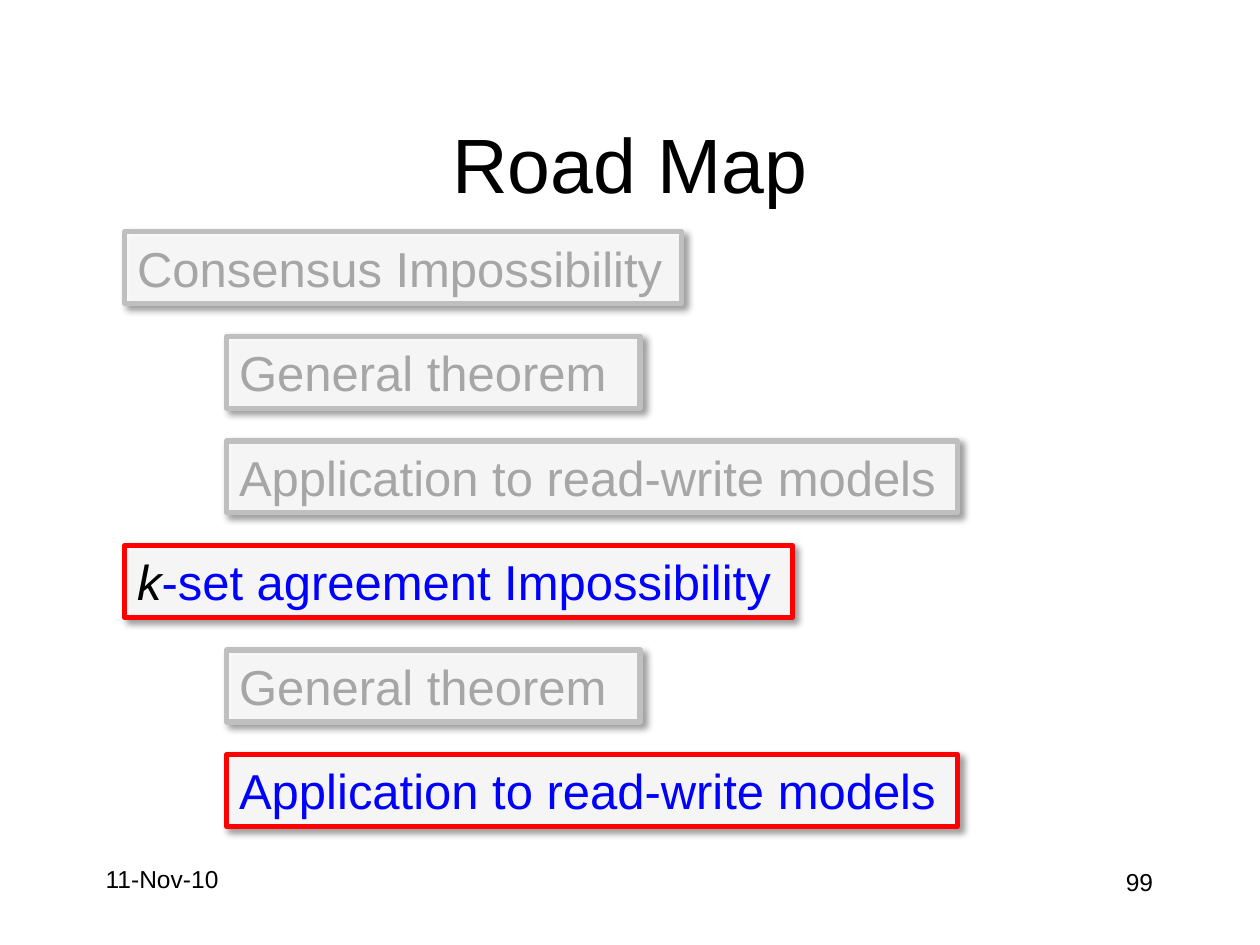
"""Build the Road Map slide with its indented list of topic boxes."""
import pptx
import pptx.dml.color
import pptx.enum.text
import pptx.oxml
import pptx.oxml.ns
import pptx.util
from pptx.util import Inches

BLACK = pptx.dml.color.RGBColor(0x00, 0x00, 0x00)
WHITE = pptx.dml.color.RGBColor(0xFF, 0xFF, 0xFF)
GRAY_TEXT = pptx.dml.color.RGBColor(0xA6, 0xA6, 0xA6)
GRAY_LINE = pptx.dml.color.RGBColor(0xBF, 0xBF, 0xBF)
RED = pptx.dml.color.RGBColor(0xFF, 0x00, 0x00)
BLUE = pptx.dml.color.RGBColor(0x00, 0x00, 0xFF)

NAMESPACE = pptx.oxml.ns.nsdecls("a")
ALPHA_XML = f'<a:alpha {NAMESPACE} val="90000"/>'
SHADOW_XML = (
    f'<a:effectLst {NAMESPACE}><a:outerShdw blurRad="50800" dist="38100" '
    'dir="2700000" algn="tl" rotWithShape="0"><a:srgbClr val="000000">'
    '<a:alpha val="40000"/></a:srgbClr></a:outerShdw></a:effectLst>'
)

TOP, STEP, BOX_HEIGHT = 1.84, 0.83, 0.57
INDENTS = [0.99, 1.8]
TOPICS = [
    (0, 4.42, False, ["Consensus Impossibility"]),
    (1, 3.28, False, ["General theorem"]),
    (1, 5.8, False, ["Application to read-write models"]),
    (0, 5.3, True, ["k", "-set agreement Impossibility"]),
    (1, 3.28, False, ["General theorem"]),
    (1, 5.8, True, ["Application to read-write models"]),
]


def add_run(paragraph, text, size, color):
    run = paragraph.add_run()
    run.text = text
    run.font.name = "Arial"
    run.font.size = pptx.util.Pt(size)
    run.font.color.rgb = color
    return run


presentation = pptx.Presentation()
presentation.slide_width = Inches(10)
presentation.slide_height = Inches(7.5)
slide = presentation.slides.add_slide(presentation.slide_layouts[5])

title = slide.shapes.title
title.left, title.top = Inches(0.75), Inches(0.67)
title.width, title.height = Inches(8.5), Inches(1.25)
title.text_frame.vertical_anchor = pptx.enum.text.MSO_ANCHOR.MIDDLE
title_paragraph = title.text_frame.paragraphs[0]
title_paragraph.alignment = pptx.enum.text.PP_ALIGN.CENTER
add_run(title_paragraph, "Road Map", 44, BLACK)

for text, left, top, alignment in [
    ("11-Nov-10", 0.74, 6.81, pptx.enum.text.PP_ALIGN.LEFT),
    ("99", 7.17, 6.83, pptx.enum.text.PP_ALIGN.RIGHT),
]:
    footer = slide.shapes.add_textbox(Inches(left), Inches(top), Inches(2.08), Inches(0.5))
    footer.text_frame.word_wrap = True
    paragraph = footer.text_frame.paragraphs[0]
    paragraph.alignment = alignment
    add_run(paragraph, text, 14, BLACK)

for row, (level, width, active, parts) in enumerate(TOPICS):
    box = slide.shapes.add_textbox(
        Inches(INDENTS[level]), Inches(TOP + row * STEP), Inches(width), Inches(BOX_HEIGHT)
    )
    box.fill.solid()
    box.fill.fore_color.rgb = WHITE
    fill_color = box.element.spPr.find(".//" + pptx.oxml.ns.qn("a:srgbClr"))
    fill_color.append(pptx.oxml.parse_xml(ALPHA_XML))
    box.line.color.rgb = RED if active else GRAY_LINE
    box.line.width = pptx.util.Pt(3)
    box.element.spPr.append(pptx.oxml.parse_xml(SHADOW_XML))
    box.text_frame.word_wrap = True
    for part in parts:
        run = add_run(box.text_frame.paragraphs[0], part, 28, BLUE if active else GRAY_TEXT)
        if part == "k":
            run.font.italic = True
            run.font.color.rgb = BLACK

presentation.save("out.pptx")
